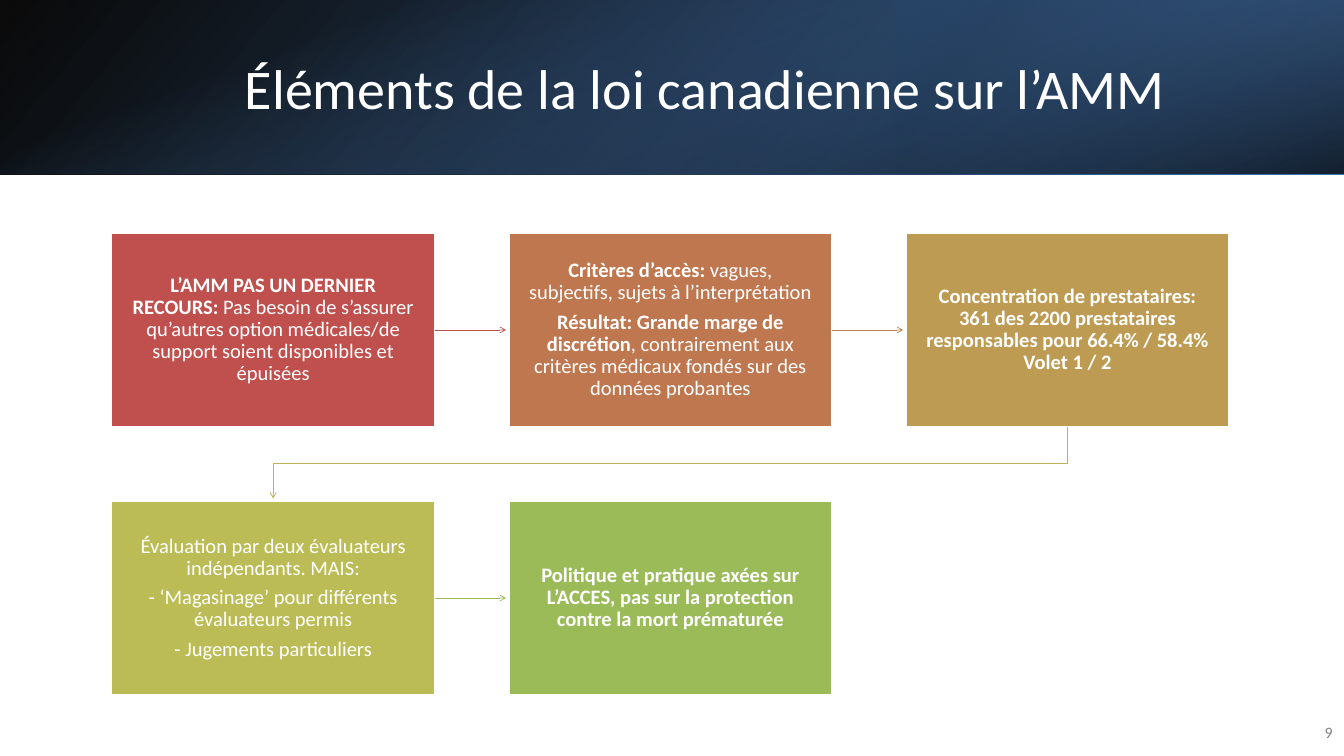
from dataclasses import dataclass
from typing import Optional

from lxml.etree import SubElement
from pptx import Presentation
from pptx.dml.color import RGBColor
from pptx.enum.shapes import MSO_CONNECTOR, MSO_SHAPE
from pptx.enum.text import MSO_ANCHOR, PP_ALIGN
from pptx.oxml.ns import qn
from pptx.util import Inches, Pt

FONT = "Calibri"
WHITE = "FFFFFF"
GREY = "808080"

# Grid of boxes, in inches
LEFT, TOP = 1.66, 3.47
COLUMN_STEP, ROW_STEP = 5.91, 3.99
BOX_WIDTH, BOX_HEIGHT = 4.81, 2.88
ARROW_GAP = 0.04
TURN_DROP = 0.55

TEXT_FRAME = {
    "word_wrap": True,
    "vertical_anchor": MSO_ANCHOR.MIDDLE,
}
BOX_MARGINS = {
    "margin_left": Inches(0.24),
    "margin_right": Inches(0.24),
    "margin_top": Inches(0.25),
    "margin_bottom": Inches(0.25),
}
BOX_PARAGRAPH = {
    "alignment": PP_ALIGN.CENTER,
    "line_spacing": 0.9,
    "space_after": Pt(7.7),
}


@dataclass(frozen=True)
class Stop:
    position: float
    color: str
    opacity: int


@dataclass(frozen=True)
class Band:
    left: float
    top: float
    width: float
    height: float
    rotation: int
    flipped: bool
    angle: int  # clockwise
    stops: tuple[Stop, Stop]


@dataclass(frozen=True)
class Run:
    text: str
    bold: bool = False


@dataclass(frozen=True)
class Step:
    column: int
    row: int
    fill: str
    paragraphs: tuple[tuple[Run, ...], ...]
    arrow: Optional[str] = None  # colour of the arrow to the next step

    @property
    def left(self) -> float:
        return LEFT + self.column * COLUMN_STEP

    @property
    def top(self) -> float:
        return TOP + self.row * ROW_STEP

    @property
    def center(self) -> float:
        return self.left + BOX_WIDTH / 2

    @property
    def middle(self) -> float:
        return self.top + BOX_HEIGHT / 2


BANDS = (
    Band(0, 0, 20, 2.59, 0, True, 140, (Stop(0, "000000", 96), Stop(1, "376092", 100))),
    Band(13.33, 0, 6.67, 2.59, 180, True, 320, (Stop(0.19, "254061", 68), Stop(1, "4F81BD", 79))),
    Band(8.71, -8.71, 2.59, 20, 90, False, 340, (Stop(0.23, "4F81BD", 0), Stop(1, "000000", 74))),
)

STEPS = (
    Step(0, 0, "C0504D", (
        (Run("L’AMM PAS UN DERNIER RECOURS: ", True),
         Run("Pas besoin de s’assurer qu’autres option médicales/de support "
             "soient disponibles et épuisées")),
    ), "C0504D"),
    Step(1, 0, "BF7750", (
        (Run("Critères d’accès: ", True), Run("vagues, subjectifs, sujets à l’interprétation")),
        (Run("Résultat: Grande marge de discrétion", True),
         Run(", contrairement aux critères médicaux fondés sur des données probantes")),
    ), "BE8351"),
    Step(2, 0, "BD9B53", (
        (Run("Concentration de prestataires: 361 des 2200 prestataires "
             "responsables pour 66.4% / 58.4% Volet 1 / 2", True),),
    ), "BDB255"),
    Step(0, 1, "BCBC56", (
        (Run("Évaluation par deux évaluateurs indépendants. MAIS:"),),
        (Run("- ‘Magasinage’ pour différents évaluateurs permis"),),
        (Run("- Jugements particuliers"),),
    ), "9BBB59"),
    Step(1, 1, "9BBB59", (
        (Run("Politique et pratique axées sur L’ACCES, pas sur la protection "
             "contre la mort prématurée", True),),
    )),
)


def rgb(color: str) -> RGBColor:
    return RGBColor.from_string(color)


def apply(target, values: dict) -> None:
    for name, value in values.items():
        setattr(target, name, value)


def add_run(paragraph, run: Run, size: float, color: str) -> None:
    text_run = paragraph.add_run()
    text_run.text = run.text
    apply(text_run.font, {"name": FONT, "size": Pt(size), "bold": run.bold})
    text_run.font.color.rgb = rgb(color)


def add_band(slide, band: Band) -> None:
    shape = slide.shapes.add_shape(
        MSO_SHAPE.RECTANGLE, *map(Inches, (band.left, band.top, band.width, band.height)))
    shape.shadow.inherit = False
    shape.rotation = band.rotation
    if band.flipped:
        shape._element.spPr.find(qn("a:xfrm")).set("flipH", "1")
    shape.line.fill.background()
    shape.fill.gradient()
    shape.fill.gradient_angle = 360 - band.angle
    for gradient_stop, stop in zip(shape.fill.gradient_stops, band.stops):
        gradient_stop.position = stop.position
        gradient_stop.color.rgb = rgb(stop.color)
    for color, stop in zip(shape._element.spPr.iter(qn("a:srgbClr")), band.stops):
        SubElement(color, qn("a:alpha"), val=str(stop.opacity * 1000))


def add_label(slide, bounds: tuple, text: str, size: float, color: str, paragraph_format: dict) -> None:
    text_box = slide.shapes.add_textbox(*map(Inches, bounds))
    apply(text_box.text_frame, TEXT_FRAME)
    paragraph = text_box.text_frame.paragraphs[0]
    apply(paragraph, paragraph_format)
    add_run(paragraph, Run(text), size, color)


def add_step(slide, step: Step):
    shape = slide.shapes.add_shape(
        MSO_SHAPE.RECTANGLE, *map(Inches, (step.left, step.top, BOX_WIDTH, BOX_HEIGHT)))
    shape.shadow.inherit = False
    shape.fill.solid()
    shape.fill.fore_color.rgb = rgb(step.fill)
    shape.line.color.rgb = rgb(WHITE)
    shape.line.width = Pt(2)
    frame = shape.text_frame
    apply(frame, TEXT_FRAME | BOX_MARGINS)
    for index, runs in enumerate(step.paragraphs):
        paragraph = frame.add_paragraph() if index else frame.paragraphs[0]
        apply(paragraph, BOX_PARAGRAPH)
        for run in runs:
            add_run(paragraph, run, 22, WHITE)
    return shape


def add_arrow(slide, start: Step, end: Step, start_shape) -> None:
    if start.row == end.row:
        arrow = slide.shapes.add_connector(
            MSO_CONNECTOR.STRAIGHT,
            Inches(start.left + BOX_WIDTH), Inches(start.middle),
            Inches(end.left - ARROW_GAP), Inches(end.middle))
        arrow.begin_connect(start_shape, 3)
        SubElement(arrow._element.spPr, qn("a:effectLst"))
    else:
        bottom = start.top + BOX_HEIGHT
        turn = bottom + TURN_DROP
        builder = slide.shapes.build_freeform(Inches(start.center), Inches(bottom))
        corners = ((start.center, turn), (end.center, turn), (end.center, end.top - ARROW_GAP))
        builder.add_line_segments([(Inches(x), Inches(y)) for x, y in corners], close=False)
        arrow = builder.convert_to_shape()
        arrow.fill.background()
        arrow.shadow.inherit = False
    arrow.line.color.rgb = rgb(start.arrow)
    arrow.line.width = Pt(0.75)
    SubElement(arrow.line._get_or_add_ln(), qn("a:tailEnd"), type="arrow")


def main() -> None:
    presentation = Presentation()
    presentation.slide_width, presentation.slide_height = Inches(20), Inches(11.25)
    slide = presentation.slides.add_slide(presentation.slide_layouts[6])

    # Header band, title and slide number
    for band in BANDS:
        add_band(slide, band)
    add_label(slide, (2.25, 0.57, 16.48, 1.44), "Éléments de la loi canadienne sur l’AMM",
              60, WHITE, {"alignment": PP_ALIGN.CENTER})
    add_label(slide, (19.2, 10.59, 0.73, 0.6), "9", 17, GREY,
              {"alignment": PP_ALIGN.RIGHT, "space_after": Pt(6)})

    # Steps and the arrows between them
    shapes = [add_step(slide, step) for step in STEPS]
    for start, end, start_shape in zip(STEPS, STEPS[1:], shapes):
        add_arrow(slide, start, end, start_shape)

    presentation.save("out.pptx")


if __name__ == "__main__":
    main()
